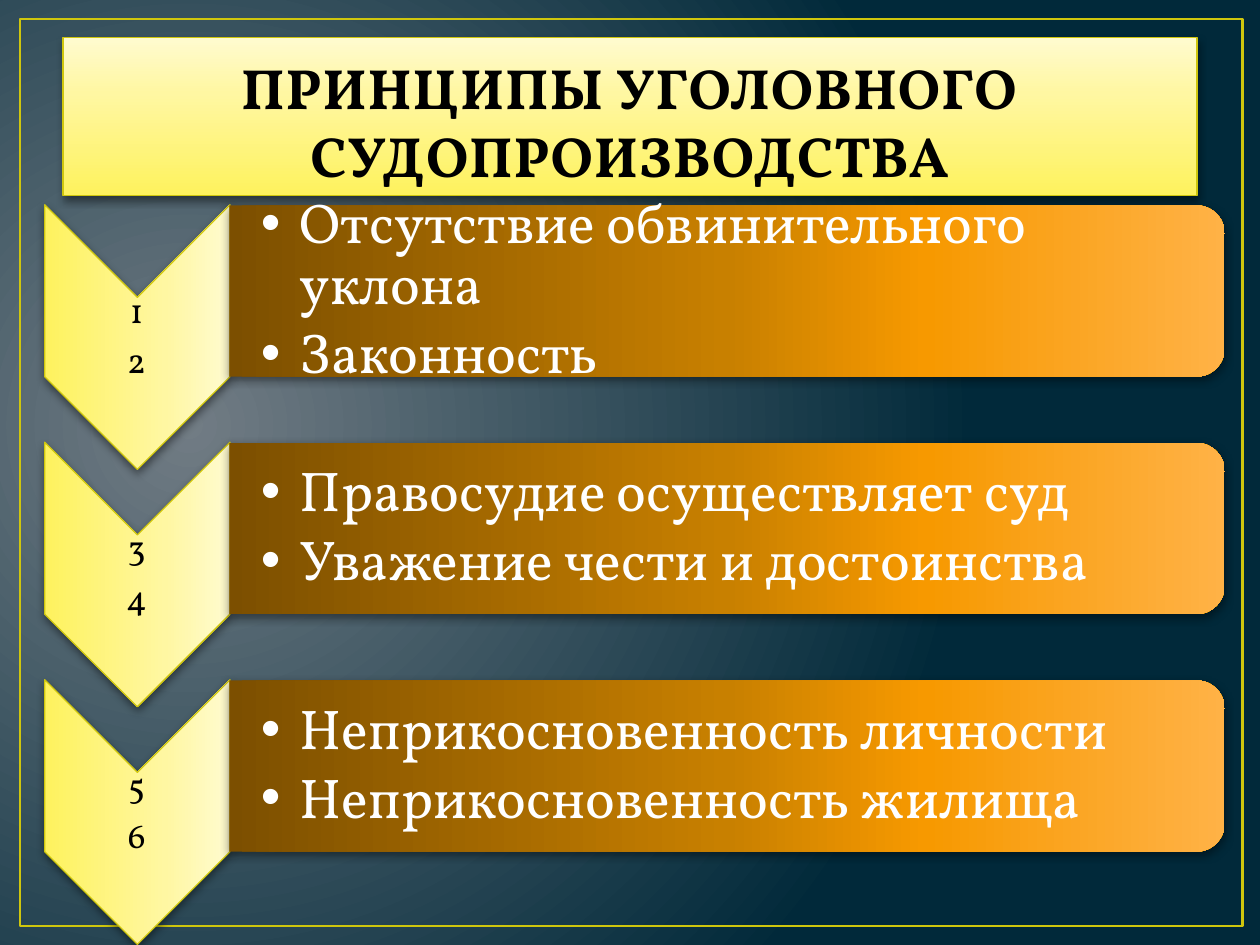
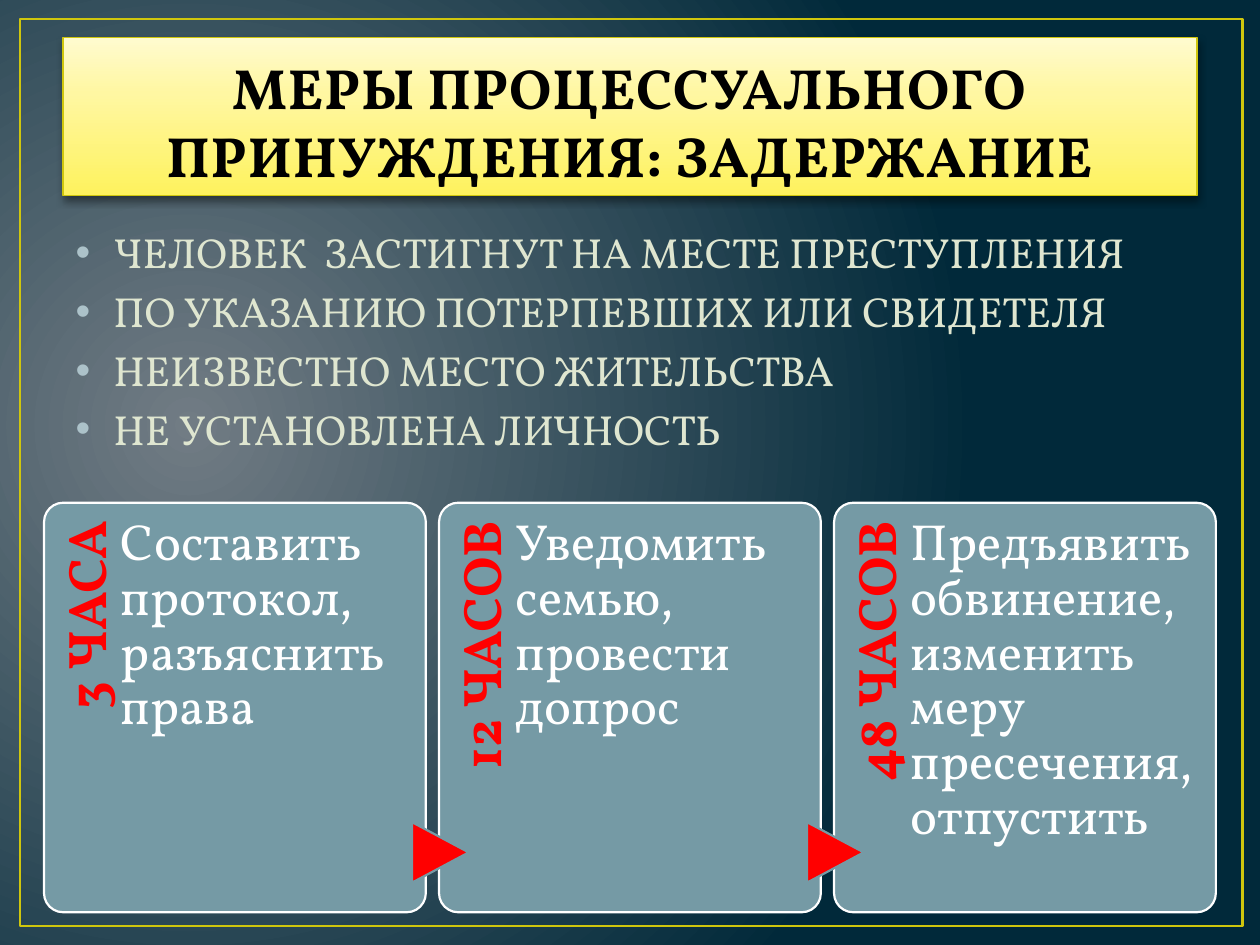
from lxml.etree import SubElement
from pptx import Presentation
from pptx.dml.color import RGBColor
from pptx.enum.shapes import MSO_SHAPE
from pptx.enum.text import MSO_ANCHOR, MSO_AUTO_SIZE, PP_ALIGN
from pptx.oxml.ns import qn
from pptx.util import Inches, Pt

FONT = "Vollkorn"
COLORS = {
    "gold_line": "CFC60D", "black": "000000", "white": "FFFFFF", "red": "FF0000",
    "title_outline": "384F55", "body": "DFE6D0", "bullet": "ACC2C9", "card": "759AA5",
}
BACKDROP = [(0, "717C84"), (100, "01293A")]
YELLOW = [(0, "FEF25E"), (65, "FFF7A2"), (100, "FFFBCF")]
ORANGE = [(0, "7C4F00"), (50, "C88000"), (70, "F79900"), (100, "FFB246")]
COLORS = {name: RGBColor.from_string(value) for name, value in COLORS.items()}


def set_gradient(fill, element, stops, radial=False):
    """Fill with colour stops, running upwards or outwards from a point."""
    fill.gradient()
    gradient = element.find(".//" + qn("a:gradFill"))
    for child in list(gradient):
        gradient.remove(child)
    stop_list = SubElement(gradient, qn("a:gsLst"))
    for position, color in stops:
        stop = SubElement(stop_list, qn("a:gs"), pos=str(position * 1000))
        SubElement(stop, qn("a:srgbClr"), val=color)
    if radial:
        circle = SubElement(gradient, qn("a:path"), {"path": "circle"})
        SubElement(circle, qn("a:fillToRect"), l="15000", t="50000", r="85000", b="60000")
    else:
        SubElement(gradient, qn("a:lin"), ang="16200000", scaled="0")


def write_text(shape, lines, size, color, align=PP_ALIGN.LEFT, anchor=MSO_ANCHOR.TOP,
               insets=(0.1, 0.05, 0.1, 0.05), bold=False, spacing=1.0, before=0, after=0,
               indent=0, bullet_color=None):
    """Write one paragraph per line; before and after are shares of the size."""
    frame = shape.text_frame
    frame.word_wrap = True
    frame.auto_size = MSO_AUTO_SIZE.NONE
    frame.vertical_anchor = anchor
    (frame.margin_left, frame.margin_top,
     frame.margin_right, frame.margin_bottom) = map(Inches, insets)
    for index, line in enumerate(lines):
        paragraph = frame.add_paragraph() if index else frame.paragraphs[0]
        paragraph.alignment = align
        paragraph.line_spacing = spacing
        paragraph.space_before = Pt(size * before)
        paragraph.space_after = Pt(size * after)
        if indent:
            properties = paragraph._p.get_or_add_pPr()
            properties.set("marL", str(Inches(indent)))
            properties.set("indent", str(-Inches(indent)))
            bullet = SubElement(properties, qn("a:buClr"))
            SubElement(bullet, qn("a:srgbClr"), val=str(bullet_color))
            SubElement(properties, qn("a:buFont"), typeface="Arial")
            SubElement(properties, qn("a:buChar"), char="•")
        run = paragraph.add_run()
        run.text = line
        run.font.name = FONT
        run.font.size = Pt(size)
        run.font.bold = bold
        run.font.color.rgb = color


presentation = Presentation()
presentation.slide_width = Inches(10)
presentation.slide_height = Inches(7.5)
principles_slide = presentation.slides.add_slide(presentation.slide_layouts[5])
detention_slide = presentation.slides.add_slide(presentation.slide_layouts[1])
glossy_shapes = []

# Master: dark radial background and thin gold frame
master = presentation.slide_master
set_gradient(master.background.fill, master.element, BACKDROP, radial=True)
frame_shape = principles_slide.shapes.add_shape(
    MSO_SHAPE.RECTANGLE, Inches(0.16), Inches(0.15), Inches(9.7), Inches(7.2))
frame_shape.fill.background()
frame_shape.line.color.rgb = COLORS["gold_line"]
frame_shape.line.width = Pt(1.5)
frame_shape.shadow.inherit = False
master.shapes._spTree.insert(2, frame_shape._element)

# Title plates
for slide, heading in [
    (principles_slide, "ПРИНЦИПЫ УГОЛОВНОГО СУДОПРОИЗВОДСТВА"),
    (detention_slide, "МЕРЫ ПРОЦЕССУАЛЬНОГО ПРИНУЖДЕНИЯ: ЗАДЕРЖАНИЕ"),
]:
    title = slide.shapes.title
    title.left, title.top, title.width, title.height = map(Inches, (0.5, 0.3, 9, 1.25))
    set_gradient(title.fill, title._element, YELLOW)
    title.line.color.rgb = COLORS["gold_line"]
    title.line.width = Pt(0.75)
    write_text(title, [heading], 32.4, COLORS["black"], PP_ALIGN.CENTER,
               MSO_ANCHOR.BOTTOM, bold=True)
    run_properties = title.text_frame.paragraphs[0].runs[0]._r.get_or_add_rPr()
    run_properties.set("spc", "50")
    outline = SubElement(run_properties, qn("a:ln"), w=str(Pt(1.05)))
    outline_fill = SubElement(outline, qn("a:solidFill"))
    SubElement(outline_fill, qn("a:srgbClr"), val=str(COLORS["title_outline"]))
    run_properties.insert(0, outline)
    glossy_shapes.append(title)

# Slide 1: numbered chevrons with a bar of principles each
principles = [
    ("Отсутствие обвинительного уклона", "Законность"),
    ("Правосудие осуществляет суд", "Уважение чести и достоинства"),
    ("Неприкосновенность личности", "Неприкосновенность жилища"),
]
ROW_STEP = 1.885
shapes = principles_slide.shapes
for row, lines in enumerate(principles):
    offset = row * ROW_STEP
    chevron = shapes.add_shape(MSO_SHAPE.CHEVRON, Inches(0.04), Inches(1.94 + offset),
                               Inches(2.1), Inches(1.47))
    chevron.rotation = 90
    set_gradient(chevron.fill, chevron._element, YELLOW)
    chevron.line.color.rgb = COLORS["gold_line"]
    chevron.line.width = Pt(0.75)

    numbers = shapes.add_textbox(Inches(0.35), Inches(2.36 + offset), Inches(1.47), Inches(0.63))
    write_text(numbers, [str(2 * row + 1), str(2 * row + 2)], 20, COLORS["black"],
               PP_ALIGN.CENTER, MSO_ANCHOR.MIDDLE, (0.01,) * 4, spacing=0.9, after=0.35)

    bar = shapes.add_shape(MSO_SHAPE.ROUND_2_SAME_RECTANGLE, Inches(5.09),
                           Inches(-1.64 + offset), Inches(1.36), Inches(7.9))
    bar.rotation = 90
    set_gradient(bar.fill, bar._element, ORANGE)
    bar.line.fill.background()
    glossy_shapes += [chevron, bar]

    bar_text = shapes.add_textbox(Inches(1.82), Inches(1.69 + offset), Inches(7.84), Inches(1.23))
    write_text(bar_text, lines, 32, COLORS["white"], anchor=MSO_ANCHOR.MIDDLE,
               insets=(0.25, 0.02, 0.02, 0.02), spacing=0.9, after=0.15,
               indent=0.31, bullet_color=COLORS["white"])

# Slide 2: grounds for detention
grounds = detention_slide.placeholders[1]
grounds.left, grounds.top, grounds.width, grounds.height = map(Inches, (0.5, 1.75, 9, 2.24))
write_text(grounds, [
    "ЧЕЛОВЕК  ЗАСТИГНУТ НА МЕСТЕ ПРЕСТУПЛЕНИЯ",
    "ПО УКАЗАНИЮ ПОТЕРПЕВШИХ ИЛИ СВИДЕТЕЛЯ",
    "НЕИЗВЕСТНО МЕСТО ЖИТЕЛЬСТВА",
    "НЕ УСТАНОВЛЕНА ЛИЧНОСТЬ",
], 24, COLORS["body"], before=0.2, indent=0.3, bullet_color=COLORS["bullet"])

# Slide 2: deadline cards joined by red arrows
deadlines = [
    ("3 ЧАСА", "Составить протокол, разъяснить права"),
    ("12 ЧАСОВ", "Уведомить семью, провести допрос"),
    ("48 ЧАСОВ", "Предъявить обвинение, изменить меру пресечения, отпустить"),
]
CARD_STEP = 3.135
CARD_TOP = 3.99
CARD_HEIGHT = 3.25
shapes = detention_slide.shapes
for column, (deadline, duty) in enumerate(deadlines):
    left = 0.35 + column * CARD_STEP
    card = shapes.add_shape(MSO_SHAPE.ROUNDED_RECTANGLE, Inches(left), Inches(CARD_TOP),
                            Inches(3.03), Inches(CARD_HEIGHT))
    card.adjustments[0] = 0.05
    card.fill.solid()
    card.fill.fore_color.rgb = COLORS["card"]
    card.line.color.rgb = COLORS["white"]
    card.line.width = Pt(1.25)
    card.shadow.inherit = False

    label = shapes.add_textbox(Inches(left - 1.02), Inches(5.01), Inches(2.66), Inches(0.61))
    label.rotation = 270
    write_text(label, [deadline], 31, COLORS["red"], PP_ALIGN.RIGHT,
               insets=(0, 0.12, 0.15, 0), bold=True, spacing=0.9, after=0.35)

    if column:
        arrow = shapes.add_shape(MSO_SHAPE.FLOWCHART_EXTRACT, Inches(left - 0.23),
                                 Inches(6.54), Inches(0.48), Inches(0.45))
        arrow.rotation = 90
        arrow.fill.solid()
        arrow.fill.fore_color.rgb = COLORS["red"]
        arrow.line.color.rgb = COLORS["card"]
        arrow.line.width = Pt(1.25)
        arrow.shadow.inherit = False

    duty_text = shapes.add_textbox(Inches(left + 0.61), Inches(CARD_TOP),
                                   Inches(2.25), Inches(CARD_HEIGHT))
    write_text(duty_text, [duty], 29, COLORS["white"], insets=(0, 0.11, 0, 0),
               spacing=0.9, after=0.35)

# Soft shadow below every gradient shape
for shape in glossy_shapes:
    shape.shadow.inherit = False
    effects = shape._element.spPr.find(qn("a:effectLst"))
    shadow = SubElement(effects, qn("a:outerShdw"), blurRad=str(Pt(5)), dist=str(Pt(2)),
                        dir="5400000", rotWithShape="0")
    shadow_color = SubElement(shadow, qn("a:srgbClr"), val=str(COLORS["black"]))
    SubElement(shadow_color, qn("a:alpha"), val="43000")

presentation.save("out.pptx")
